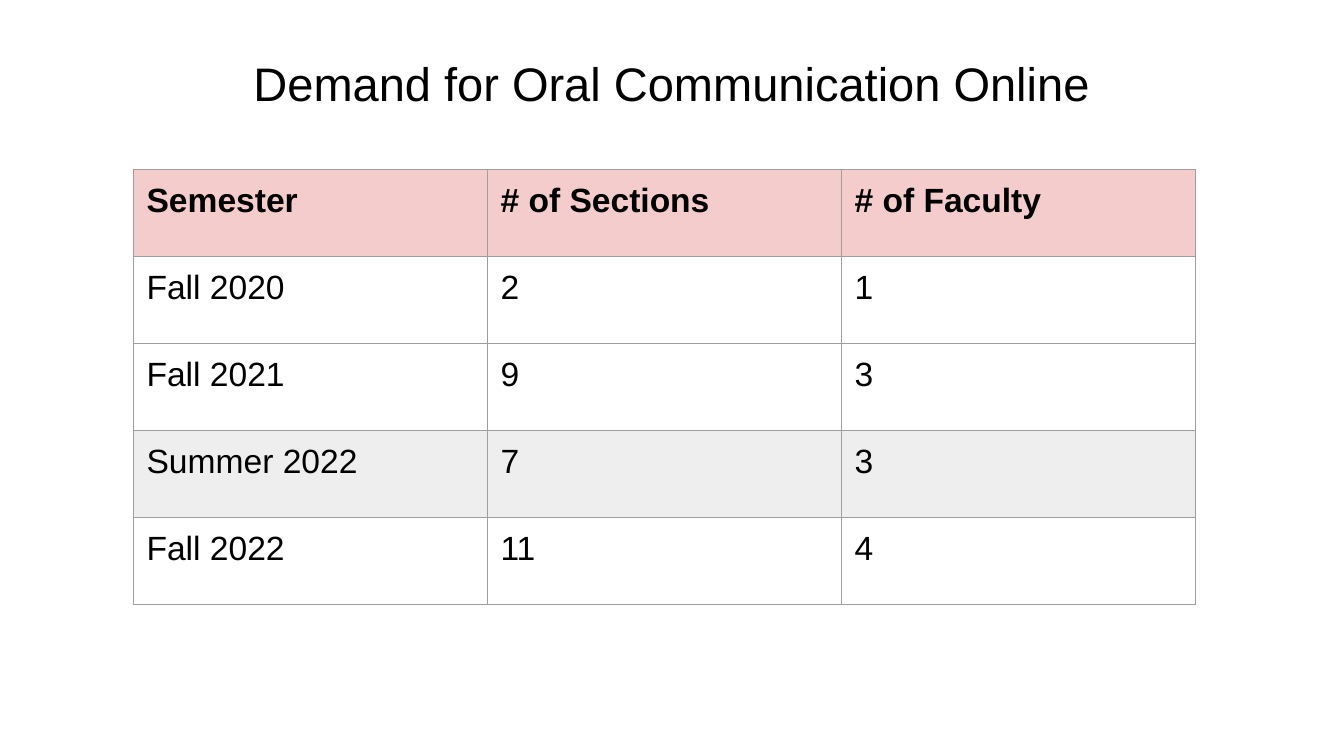
from lxml import etree
from pptx import Presentation
from pptx import util as u
from pptx.dml.color import RGBColor
from pptx.enum import text
from pptx.oxml.ns import qn

BLACK = RGBColor(0x00, 0x00, 0x00)
PINK = RGBColor(0xF4, 0xCC, 0xCC)
LIGHT_GREY = RGBColor(0xEE, 0xEE, 0xEE)
BORDER_GREY = RGBColor(0x9E, 0x9E, 0x9E)
FONT = "Arial"
INSET = u.Cm(0.25)

ROWS = [
    ("Semester", "# of Sections", "# of Faculty"),
    ("Fall 2020", "2", "1"),
    ("Fall 2021", "9", "3"),
    ("Summer 2022", "7", "3"),
    ("Fall 2022", "11", "4"),
]
ROW_FILLS = {0: PINK, 3: LIGHT_GREY}


def write_text(frame, content, size=18, bold=False, color=BLACK,
               align=text.PP_ALIGN.LEFT):
    """Put one formatted paragraph into a text frame."""
    frame.word_wrap = True
    paragraph = frame.paragraphs[0]
    paragraph.alignment = align
    run = paragraph.add_run()
    run.text = content
    run.font.name = FONT
    run.font.size = u.Pt(size)
    run.font.bold = bold
    run.font.color.rgb = color


def set_insets(target):
    """Give a cell or text frame the same inset on every side."""
    target.margin_left = target.margin_right = INSET
    target.margin_top = target.margin_bottom = INSET


def add_borders(cell, color=BORDER_GREY, width=0.75):
    """Draw all four cell borders; call before setting the cell fill."""
    properties = cell._tc.get_or_add_tcPr()
    for side in ("a:lnL", "a:lnR", "a:lnT", "a:lnB"):
        line = etree.SubElement(properties, qn(side), w=str(u.Pt(width)))
        fill = etree.SubElement(line, qn("a:solidFill"))
        etree.SubElement(fill, qn("a:srgbClr"), val=str(color))


def add_title(slide, left, top, width, height):
    frame = slide.shapes.add_textbox(left, top, width, height).text_frame
    set_insets(frame)
    frame.vertical_anchor = text.MSO_ANCHOR.BOTTOM
    write_text(frame, "Demand for Oral Communication Online", size=25.2,
               align=text.PP_ALIGN.CENTER)


def add_demand_table(slide, left, top, width, height):
    table = slide.shapes.add_table(len(ROWS), len(ROWS[0]),
                                   left, top, width, height).table
    table.horz_banding = False
    for row_index, values in enumerate(ROWS):
        for column_index, value in enumerate(values):
            cell = table.cell(row_index, column_index)
            set_insets(cell)
            add_borders(cell)
            if row_index in ROW_FILLS:
                cell.fill.solid()
                cell.fill.fore_color.rgb = ROW_FILLS[row_index]
            else:
                cell.fill.background()
            write_text(cell.text_frame, value, bold=row_index == 0)


def main():
    presentation = Presentation()
    presentation.slide_width = u.Cm(25.4)
    presentation.slide_height = u.Cm(14.29)
    slide = presentation.slides.add_slide(presentation.slide_layouts[6])

    # Title
    add_title(slide, u.Cm(0.86), u.Cm(0.74), u.Cm(23.67), u.Cm(1.6))

    # Sections and faculty by semester
    add_demand_table(slide, u.Cm(2.52), u.Cm(3.2), u.Cm(20.07), u.Cm(8.22))

    presentation.save("out.pptx")


if __name__ == "__main__":
    main()
